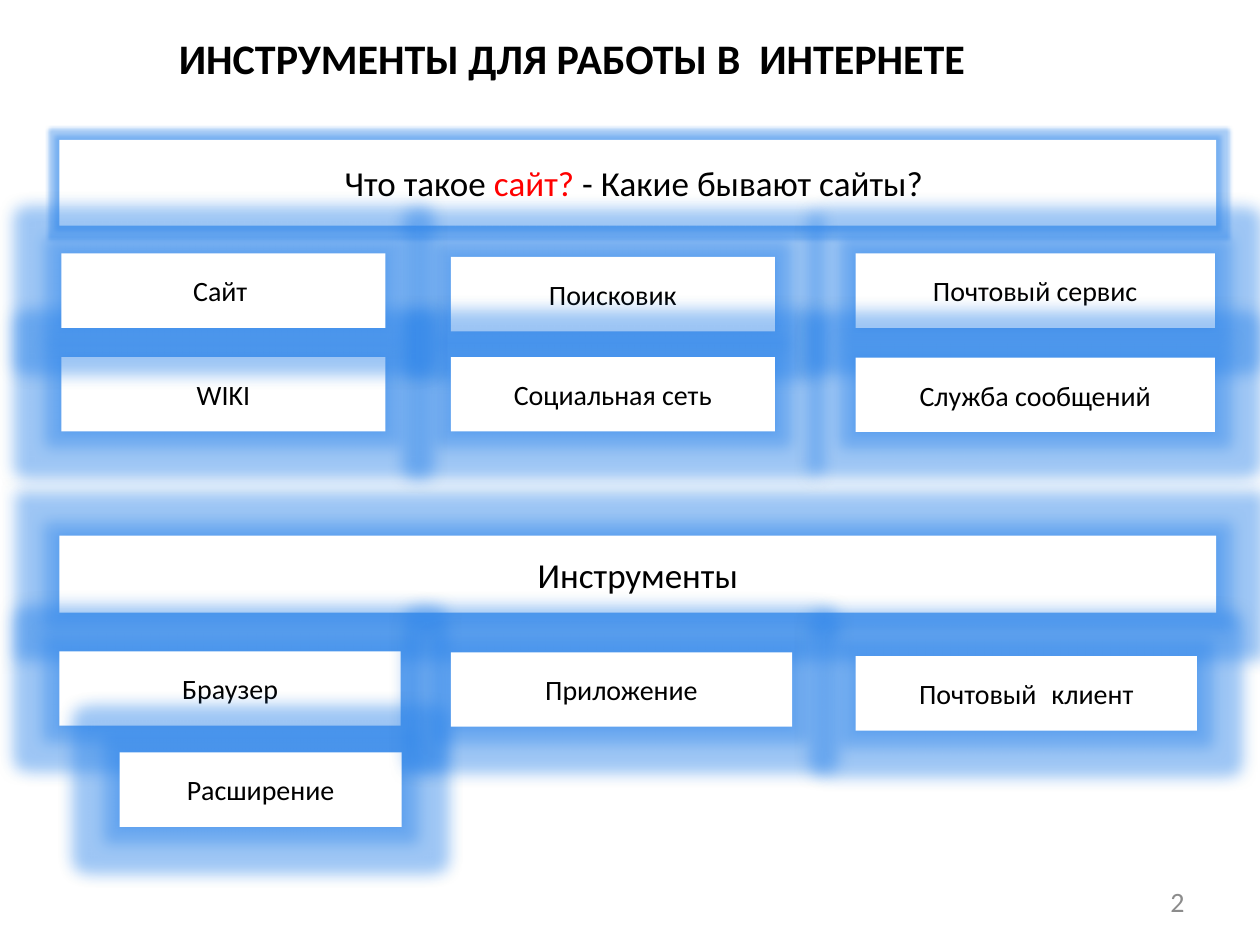
from lxml.etree import SubElement
from pptx import Presentation
from pptx.dml.color import RGBColor
from pptx.enum.shapes import MSO_SHAPE
from pptx.enum.text import MSO_ANCHOR, PP_ALIGN
from pptx.oxml.ns import qn
from pptx.util import Cm, Pt

# Content: runs are (text, colour)
BLACK, RED, GREY, WHITE, BLUE = "000000", "FF0000", "8C8C8C", "FFFFFF", "2A83EA"
TITLE = "ИНСТРУМЕНТЫ ДЛЯ РАБОТЫ В  ИНТЕРНЕТЕ"
QUESTION = [("Что такое ", BLACK), ("сайт? ", RED),
            ("- Какие бывают сайты? ", BLACK)]
TOOLS = "Инструменты"
PAGE = "2"

# Layout in cm
LEFT, MIDDLE, RIGHT = 1.22, 9.09, 17.25
BANNER_W, BOX_H = 23.32, 1.5
SITE_W, SERVICE_W, TOOL_W, EXTENSION_W = 6.53, 7.24, 6.88, 5.69
SITE_ROW, MESSAGE_ROW, TOOL_ROW, EXTENSION_ROW = 5.11, 7.2, 13.13, 15.17

# Small boxes from back to front: text, left, top, width
BOXES = [
    ("Поисковик", MIDDLE, SITE_ROW + 0.07, SITE_W),
    ("Социальная сеть", MIDDLE, MESSAGE_ROW, SITE_W),
    ("WIKI", LEFT + 0.02, MESSAGE_ROW, SITE_W),
    ("Почтовый сервис", RIGHT, SITE_ROW, SERVICE_W),
    ("Служба сообщений", RIGHT, MESSAGE_ROW + 0.01, SERVICE_W),
    ("Браузер", LEFT - 0.02, TOOL_ROW, TOOL_W),
    ("Расширение", LEFT + TOOL_W - EXTENSION_W, EXTENSION_ROW, EXTENSION_W),
    ("Приложение", MIDDLE, TOOL_ROW + 0.02, TOOL_W),
    ("Почтовый\t клиент", RIGHT, TOOL_ROW + 0.1, TOOL_W),
    ("Сайт ", LEFT + 0.02, SITE_ROW, SITE_W),
]


def rgb(value):
    return RGBColor.from_string(value)


def write(sp, text, size=16, color=BLACK, bold=False, align=PP_ALIGN.CENTER):
    """Fill a shape with one paragraph, from a string or a list of runs."""
    tf = sp.text_frame
    tf.word_wrap = True
    tf.vertical_anchor = MSO_ANCHOR.MIDDLE
    p = tf.paragraphs[0]
    p.alignment = align
    for part, part_color in [(text, color)] if isinstance(text, str) else text:
        r = p.add_run()
        r.text = part
        r.font.name = "Calibri"
        r.font.size = Pt(size)
        r.font.bold = bold
        r.font.color.rgb = rgb(part_color)


def add_effect(effects, name, **attributes):
    effect = SubElement(effects, qn(name), attributes)
    color = SubElement(effect, qn("a:srgbClr"), val=BLUE)
    SubElement(color, qn("a:alpha"), val="40000")


def add_label(s, text, left, top, width, height, **fmt):
    sp = s.shapes.add_textbox(Cm(left), Cm(top), Cm(width), Cm(height))
    write(sp, text, **fmt)


def add_box(s, text, left, top, width, height=BOX_H, glow=18, halo=True, **fmt):
    """White box with a blue glow and, with halo, a darker inner band."""
    sp = s.shapes.add_shape(MSO_SHAPE.RECTANGLE, Cm(left), Cm(top),
                            Cm(width), Cm(height))
    sp.fill.solid()
    sp.fill.fore_color.rgb = rgb(WHITE)
    sp.line.fill.background()
    sp.shadow.inherit = False
    effects = sp._element.spPr.find(qn("a:effectLst"))
    add_effect(effects, "a:glow", rad=str(Pt(glow)))
    if halo:
        add_effect(effects, "a:outerShdw", blurRad=str(Pt(5)), dist="0",
                   algn="ctr", rotWithShape="0")
    write(sp, text, **fmt)


prs = Presentation()
prs.slide_width, prs.slide_height = Cm(25.4), Cm(19.05)
s = prs.slides.add_slide(prs.slide_layouts[6])

# Title, banners and page number
add_label(s, TITLE, 0.86, 0.41, 21.34, 1.5, size=24, bold=True)
add_box(s, QUESTION, LEFT - 0.02, 2.82, BANNER_W, 1.73,
        glow=5, halo=False, size=20)
add_label(s, PAGE, 18.21, 17.65, 5.92, 1.02, color=GREY, align=PP_ALIGN.RIGHT)
add_box(s, TOOLS, LEFT - 0.02, 10.8, BANNER_W, 1.55, size=20)

# Small boxes
for text, left, top, width in BOXES:
    add_box(s, text, left, top, width)

prs.save("out.pptx")
